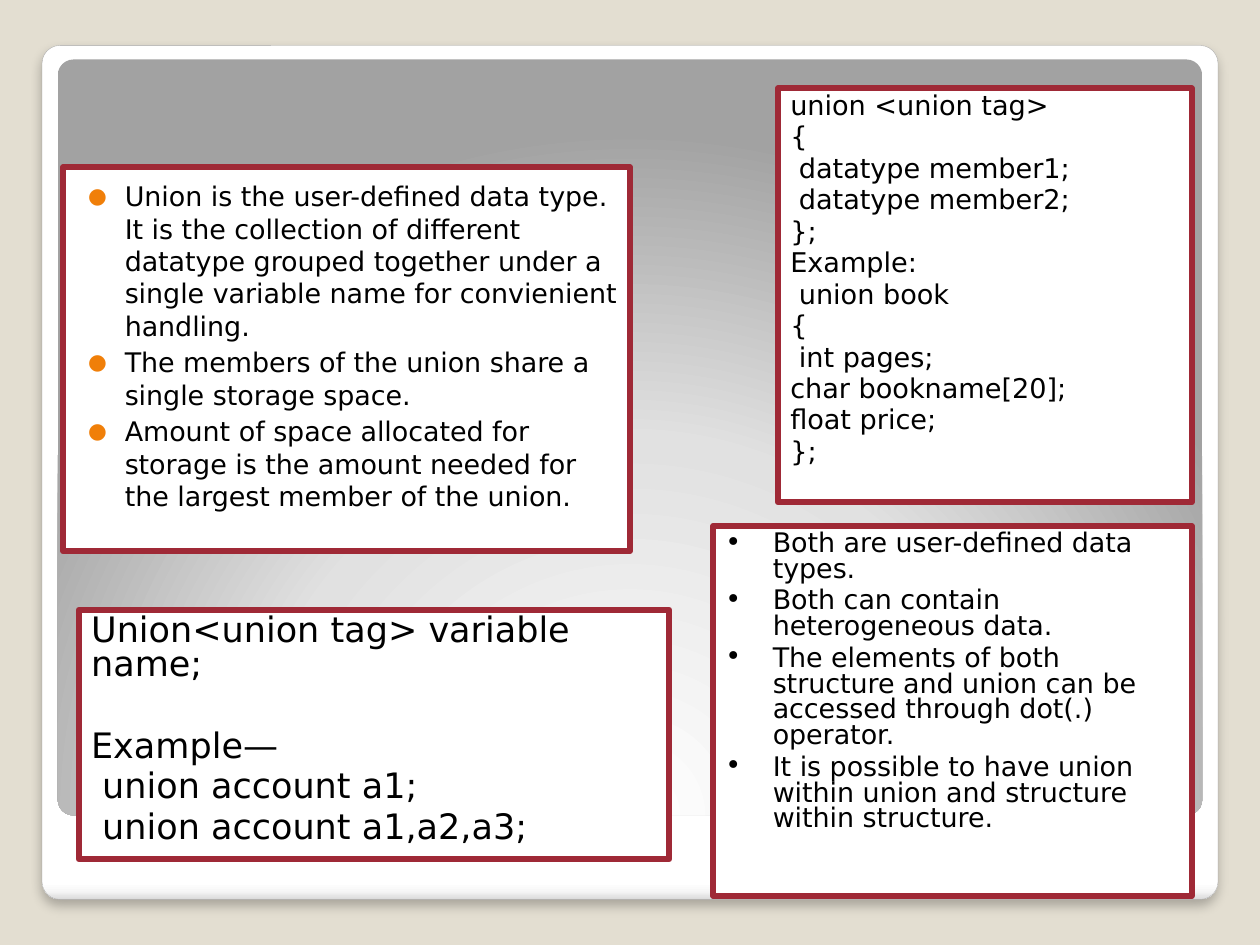
from lxml import etree
from pptx import Presentation
from pptx.dml.color import RGBColor
from pptx.enum.shapes import MSO_SHAPE as Shape
from pptx.enum.text import MSO_ANCHOR as Anchor, MSO_AUTO_SIZE as AutoSize, PP_ALIGN as Align
from pptx.oxml import parse_xml
from pptx.oxml.ns import nsdecls, qn
from pptx.util import Pt

FONT = "DejaVu Sans"
INK, PAPER, BORDER, ACCENT = "000000", "FFFFFF", "9F2936", "F07F09"

DEFINITION = [
    "Union is the user-defined data type. It is the collection of different datatype "
    "grouped together under a single variable name for convienient handling.",
    "The members of the union share a single storage space.",
    "Amount of space allocated for storage is the amount needed for the largest "
    "member of the union.",
]
SYNTAX = [
    "union <union tag>", "{", " datatype member1;", " datatype member2;", "};",
    "Example:", " union book", "{", " int pages;", "char bookname[20];",
    "float price;", "};",
]
DECLARATION = ["Union<union tag> variable name;"]
DECLARATION_EXAMPLE = ["Example—", " union account a1;", " union account a1,a2,a3;"]
SIMILARITIES = [
    "Both are user-defined data types.",
    "Both can contain heterogeneous data.",
    "The elements of both structure and union can be accessed through dot(.) operator.",
    "It is possible to have union within union and structure within structure.",
]


def rgb(code):
    return RGBColor.from_string(code)


def place(shape, box):
    shape.left, shape.top, shape.width, shape.height = (Pt(v) for v in box)


def set_gradient(shape, stops, direction):
    """Fill with (percent, colour) stops; direction is the a:lin or a:path XML."""
    shape.fill.background()
    marks = "".join(
        f'<a:gs pos="{pos * 1000}"><a:srgbClr val="{code}"/></a:gs>' for pos, code in stops)
    gradient = parse_xml(f'<a:gradFill {nsdecls("a")} rotWithShape="1">'
                         f"<a:gsLst>{marks}</a:gsLst>{direction}</a:gradFill>")
    properties = shape.element.spPr
    properties.replace(properties.find(qn("a:noFill")), gradient)


def add_rounded(slide, box):
    shape = slide.shapes.add_shape(Shape.ROUNDED_RECTANGLE, *(Pt(v) for v in box))
    shape.adjustments[0] = 0.021
    shape.shadow.inherit = False
    shape.line.fill.background()
    return shape


def add_backdrop(slide, box):
    """White card with a soft shadow and a grey panel inside it."""
    left, top, width, height = box
    card = add_rounded(slide, box)
    set_gradient(card, [(0, PAPER), (98, PAPER), (99, "F7F7F7"), (100, "DADADA")],
                 '<a:lin ang="5400000" scaled="0"/>')
    card.line.color.rgb = rgb("A4A4A4")
    card.line.width = Pt(0.16)
    card.element.spPr.find(qn("a:effectLst")).append(parse_xml(
        f'<a:outerShdw {nsdecls("a")} blurRad="{Pt(6)}" dist="{Pt(4)}" dir="5400000" '
        'algn="t" rotWithShape="0"><a:srgbClr val="000000"><a:alpha val="25000"/>'
        "</a:srgbClr></a:outerShdw>"))

    panel = add_rounded(slide, (left + 9, top + 8, width - 18, height - 56))
    set_gradient(panel, [(0, PAPER), (55, "E1E1E1"), (100, "A2A2A2")],
                 '<a:path path="circle"><a:fillToRect l="50000" t="175000" '
                 'r="50000" b="-75000"/></a:path>')


def frame(shape, insets=(7.2, 3.6, 7.2, 3.6)):
    """White box with a red border, its text at the top left."""
    shape.fill.solid()
    shape.fill.fore_color.rgb = rgb(PAPER)
    shape.line.color.rgb = rgb(BORDER)
    shape.line.width = Pt(3.35)
    text = shape.text_frame
    text.word_wrap = True
    text.auto_size = AutoSize.NONE
    text.vertical_anchor = Anchor.TOP
    text.margin_left, text.margin_top, text.margin_right, text.margin_bottom = (
        Pt(v) for v in insets)


def set_bullet(paragraph, mark, indent, color=None, percent=100):
    properties = paragraph._p.get_or_add_pPr()
    properties.set("marL", str(Pt(indent)))
    properties.set("indent", str(Pt(-indent)))
    if color:
        tint = etree.SubElement(properties, qn("a:buClr"))
        etree.SubElement(tint, qn("a:srgbClr")).set("val", color)
    etree.SubElement(properties, qn("a:buSzPct")).set("val", str(percent * 1000))
    etree.SubElement(properties, qn("a:buFont")).set("typeface", FONT)
    etree.SubElement(properties, qn("a:buChar")).set("char", mark)


def write(shape, lines, size, spacing, before, bullet=None, first_gap=None):
    """Append lines; first_gap is the space before the first one of them."""
    text = shape.text_frame
    for index, line in enumerate(lines):
        unused = len(text.paragraphs) == 1 and not text.paragraphs[0].runs
        paragraph = text.paragraphs[0] if unused else text.add_paragraph()
        paragraph.alignment = Align.LEFT
        paragraph.line_spacing = spacing
        gap = first_gap if index == 0 and first_gap else before
        paragraph.space_before = Pt(gap)
        if bullet:
            set_bullet(paragraph, **bullet)
        run = paragraph.add_run()
        run.text = line
        run.font.name = FONT
        run.font.size = Pt(size)
        run.font.color.rgb = rgb(INK)


def add_definition(slide, body, box):
    slide.shapes.element.append(body.element)  # in front of the backdrop
    place(body, box)
    frame(body, insets=(14.4, 7.2, 7.2, 3.6))
    write(body, DEFINITION, 15.4, 1.0, 2.5,
          dict(mark="●", indent=20.9, color=ACCENT, percent=80))


def add_framed_text(slide, box, lines, size, bullet=None):
    shape = slide.shapes.add_shape(Shape.RECTANGLE, *(Pt(v) for v in box))
    shape.shadow.inherit = False
    frame(shape)
    write(shape, lines, size, 0.8, size * 0.2, bullet)
    return shape


def add_declaration(slide, box):
    declaration = add_framed_text(slide, box, DECLARATION, 20)
    write(declaration, DECLARATION_EXAMPLE, 20, 0.8, 4, first_gap=27.4)


def main():
    deck = Presentation()
    deck.slide_width, deck.slide_height = Pt(720), Pt(540)
    slide = deck.slides.add_slide(deck.slide_layouts[1])
    slide.background.fill.solid()
    slide.background.fill.fore_color.rgb = rgb("E3DED1")
    heading, body = slide.placeholders
    heading.element.getparent().remove(heading.element)

    add_backdrop(slide, (24, 26, 672, 488))
    add_definition(slide, body, (36, 95.5, 324, 219.5))
    add_framed_text(slide, (444.5, 50.5, 236.5, 236.5), SYNTAX, 15.5)
    add_declaration(slide, (45, 348.5, 337.5, 142.5))
    add_framed_text(slide, (407.5, 300.5, 273.5, 211.5), SIMILARITIES, 15.4,
                    dict(mark="•", indent=27))
    deck.save("out.pptx")


if __name__ == "__main__":
    main()
